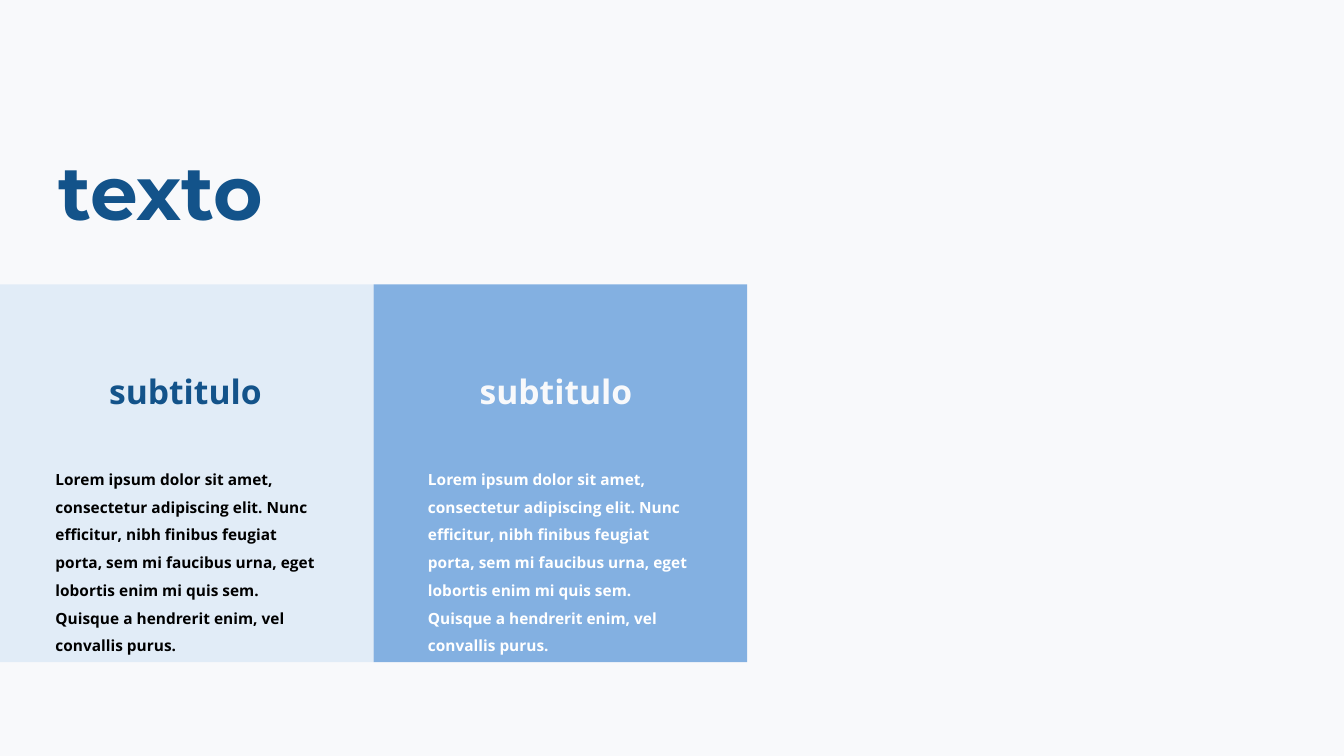
from dataclasses import dataclass

from pptx import Presentation
from pptx.dml.color import RGBColor
from pptx.enum import shapes, text
from pptx.oxml import parse_xml
from pptx.oxml.ns import nsdecls
from pptx.util import Inches, Pt


@dataclass(frozen=True)
class Theme:
    page: str = "F8F9FB"
    navy: str = "13538A"
    pale: str = "E1ECF7"
    sky: str = "83B0E1"
    black: str = "000000"
    white: str = "FFFFFF"
    heading_font: str = "Montserrat"
    text_font: str = "Open Sans"
    title_size: int = 54
    subtitle_size: int = 24
    body_size: int = 11


THEME = Theme()
LOREM = (
    "Lorem ipsum dolor sit amet, consectetur adipiscing elit. Nunc efficitur, "
    "nibh finibus feugiat porta, sem mi faucibus urna, eget lobortis enim mi "
    "quis sem. Quisque a hendrerit enim, vel convallis purus."
)


def place(item, left, top, width, height):
    item.left, item.top = Inches(left), Inches(top)
    item.width, item.height = Inches(width), Inches(height)


def write(holder, words, font, size, color, align=text.PP_ALIGN.LEFT, spacing=0.9):
    frame = holder.text_frame
    frame.text = words
    frame.word_wrap = True
    frame.auto_size = text.MSO_AUTO_SIZE.NONE
    frame.vertical_anchor = text.MSO_ANCHOR.TOP
    para = frame.paragraphs[0]
    para.alignment = align
    para.line_spacing = spacing
    para.space_before = Pt(10)
    para.font.name = font
    para.font.size = Pt(size)
    para.font.bold = True
    para.font.color.rgb = RGBColor.from_string(color)
    properties = para._p.get_or_add_pPr()
    properties.set("marL", "0")
    properties.set("indent", "0")
    bullet = parse_xml(f"<a:buNone {nsdecls('a')}/>")
    properties.find("{*}defRPr").addprevious(bullet)


def add_title(page, box):
    place(page.shapes.title, *box)
    write(page.shapes.title, "texto", THEME.heading_font, THEME.title_size, THEME.navy)


def add_panel(page, box, holders, inset, fill, subtitle_color, body_color):
    left, top, width, height = box
    panel = page.shapes.add_shape(
        shapes.MSO_SHAPE.RECTANGLE, *(Inches(length) for length in box)
    )
    panel.shadow.inherit = False
    panel.fill.solid()
    panel.fill.fore_color.rgb = RGBColor.from_string(fill)
    panel.line.fill.background()
    page.shapes.title.element.addprevious(panel.element)

    subtitle, body = holders
    subtitle_inset, body_inset = inset
    place(subtitle, left + subtitle_inset, top + 0.85, 2.78, 0.42)
    write(subtitle, "subtitulo", THEME.text_font, THEME.subtitle_size,
          subtitle_color, text.PP_ALIGN.CENTER)
    place(body, left + body_inset, top + 1.7, 2.78, 1.31)
    write(body, LOREM, THEME.text_font, THEME.body_size, body_color, spacing=1.5)


def build_slide(deck):
    page = deck.slides.add_slide(deck.slide_layouts.get_by_name("Comparison"))
    page.background.fill.solid()
    page.background.fill.fore_color.rgb = RGBColor.from_string(THEME.page)
    add_title(page, (0.48, 1.49, 5.7, 0.81))
    holders = list(page.placeholders)[1:]
    panels = (
        ((0.45, 0.45), THEME.pale, THEME.navy, THEME.black),
        ((0.42, 0.44), THEME.sky, THEME.page, THEME.white),
    )
    width = 3.705
    for index, style in enumerate(panels):
        box = (index * width, 2.82, width, 3.75)
        add_panel(page, box, holders[2 * index:2 * index + 2], *style)


def main():
    deck = Presentation()
    deck.slide_width, deck.slide_height = Inches(13.33), Inches(7.5)
    build_slide(deck)
    deck.save("out.pptx")


if __name__ == "__main__":
    main()
